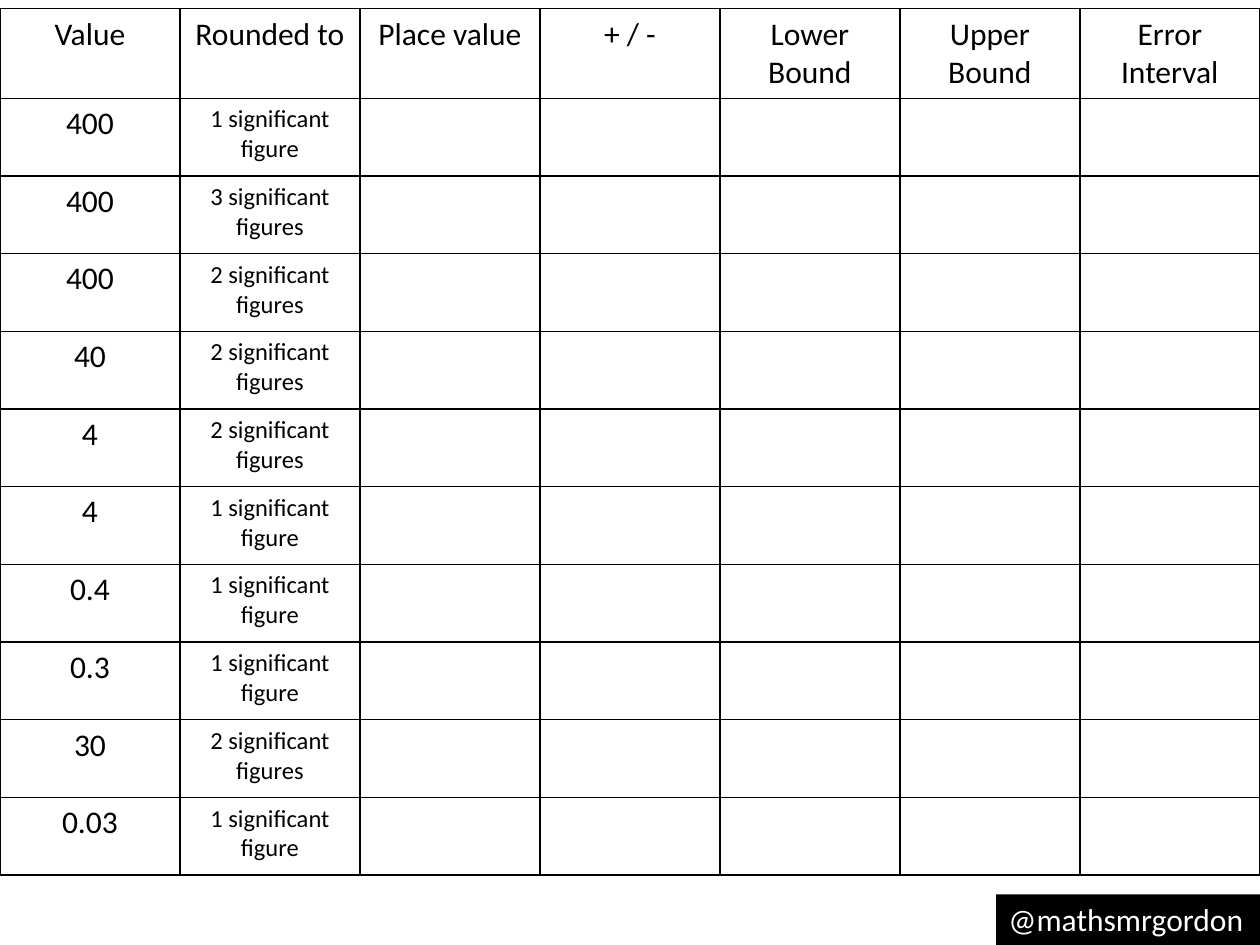
"""Build a worksheet slide on bounds and error intervals."""
import lxml.etree
import pptx
import pptx.dml.color
import pptx.enum.shapes
import pptx.enum.text
import pptx.oxml.ns
import pptx.util

Pt = pptx.util.Pt
ALIGN = pptx.enum.text.PP_ALIGN

HEADINGS = ["Value", "Rounded to", "Place value", "+ / -",
            "Lower Bound", "Upper Bound", "Error Interval"]
QUESTIONS = [("400", 1), ("400", 3), ("400", 2), ("40", 2), ("4", 2),
             ("4", 1), ("0.4", 1), ("0.3", 1), ("30", 2), ("0.03", 1)]
HANDLE = "@mathsmrgordon"

SLIDE_WIDTH, SLIDE_HEIGHT = 720, 540
TABLE_TOP, HEADER_HEIGHT, ROW_HEIGHT = 5, 50.8, 44.4
LABEL_WIDTH, LABEL_HEIGHT = 150.8, 29
BLACK, WHITE = "000000", "FFFFFF"


def color(value):
    return pptx.dml.color.RGBColor.from_string(value)


def write(text_frame, text, size=18, fill=BLACK, align=ALIGN.CENTER):
    text_frame.word_wrap = True
    paragraph = text_frame.paragraphs[0]
    paragraph.alignment = align
    run = paragraph.add_run()
    run.text = text
    run.font.name = "Calibri"
    run.font.size = Pt(size)
    run.font.color.rgb = color(fill)


def add_borders(cell):
    properties = cell._tc.get_or_add_tcPr()
    qn = pptx.oxml.ns.qn
    for position, side in enumerate(("a:lnL", "a:lnR", "a:lnT", "a:lnB")):
        line = lxml.etree.Element(qn(side), w=str(Pt(1)))
        fill = lxml.etree.SubElement(line, qn("a:solidFill"))
        lxml.etree.SubElement(fill, qn("a:srgbClr"), val=BLACK)
        properties.insert(position, line)


def add_worksheet(slide):
    rows, columns = len(QUESTIONS) + 1, len(HEADINGS)
    height = HEADER_HEIGHT + ROW_HEIGHT * len(QUESTIONS)
    table = slide.shapes.add_table(
        rows, columns, Pt(0), Pt(TABLE_TOP), Pt(SLIDE_WIDTH), Pt(height)).table
    for column in table.columns:
        column.width = Pt(SLIDE_WIDTH / columns)
    for index, row in enumerate(table.rows):
        row.height = Pt(ROW_HEIGHT if index else HEADER_HEIGHT)
    for cell in table.iter_cells():
        cell.fill.background()
        add_borders(cell)
    for column, heading in enumerate(HEADINGS):
        write(table.cell(0, column).text_frame, heading)
    for row, (value, figures) in enumerate(QUESTIONS, start=1):
        noun = "figure" if figures == 1 else "figures"
        write(table.cell(row, 0).text_frame, value)
        write(table.cell(row, 1).text_frame, f"{figures} significant {noun}", size=14)


def add_label(slide):
    shape = slide.shapes.add_shape(
        pptx.enum.shapes.MSO_SHAPE.RECTANGLE,
        Pt(SLIDE_WIDTH - LABEL_WIDTH), Pt(SLIDE_HEIGHT - LABEL_HEIGHT),
        Pt(LABEL_WIDTH), Pt(LABEL_HEIGHT))
    shape.shadow.inherit = False
    shape.fill.solid()
    shape.fill.fore_color.rgb = color(BLACK)
    shape.line.fill.background()
    shape.text_frame.vertical_anchor = pptx.enum.text.MSO_ANCHOR.TOP
    write(shape.text_frame, HANDLE, fill=WHITE, align=ALIGN.LEFT)


def main():
    presentation = pptx.Presentation()
    presentation.slide_width = Pt(SLIDE_WIDTH)
    presentation.slide_height = Pt(SLIDE_HEIGHT)
    slide = presentation.slides.add_slide(presentation.slide_layouts[6])
    add_worksheet(slide)
    add_label(slide)
    presentation.save("out.pptx")


if __name__ == "__main__":
    main()
